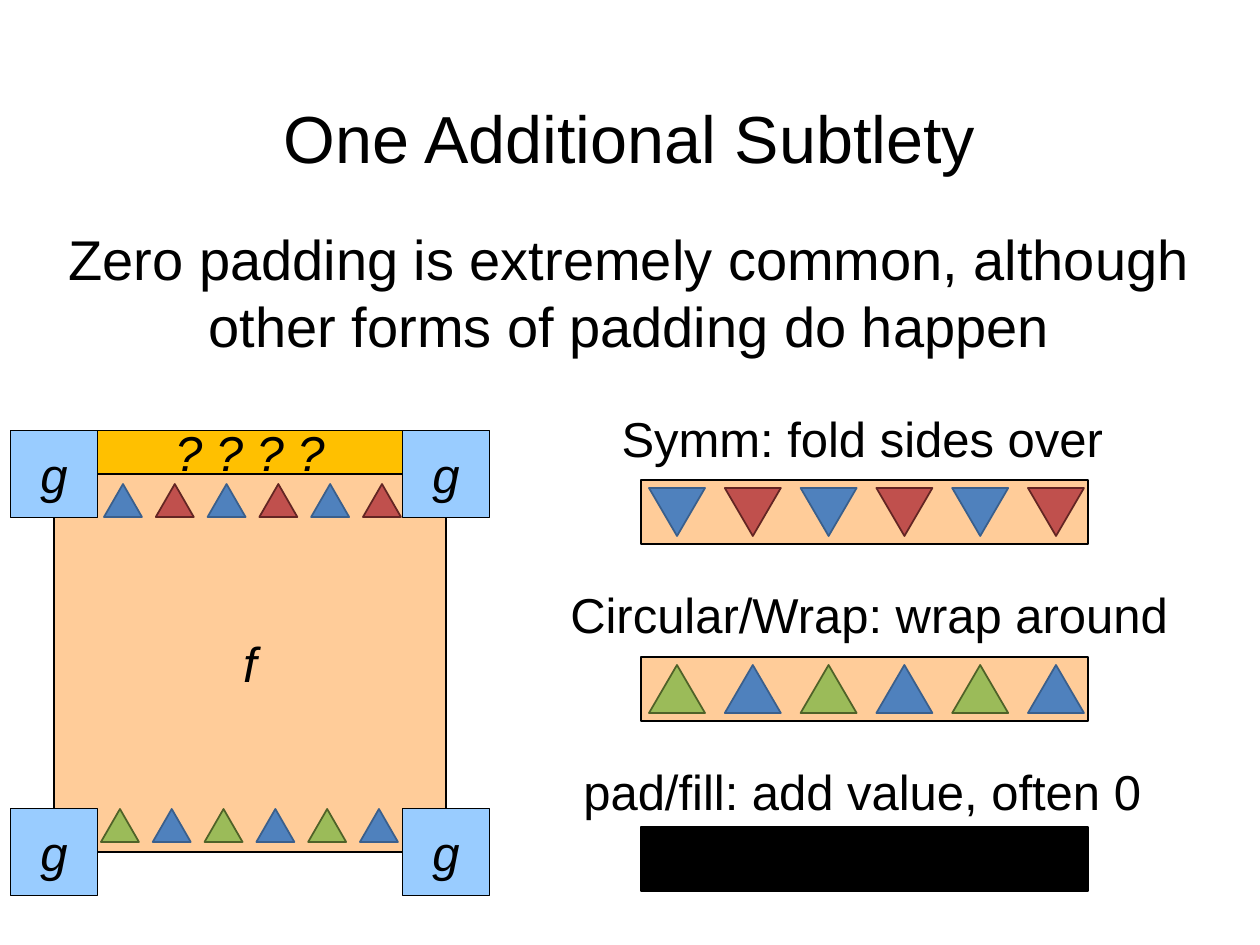
from dataclasses import dataclass

from pptx import Presentation
from pptx.dml.color import RGBColor
from pptx.enum.shapes import MSO_SHAPE
from pptx.enum.text import MSO_ANCHOR, MSO_AUTO_SIZE, PP_ALIGN
from pptx.util import Emu, Inches, Pt

RECT = MSO_SHAPE.RECTANGLE
TRIANGLE = MSO_SHAPE.ISOSCELES_TRIANGLE
MIDDLE = MSO_ANCHOR.MIDDLE
CENTER = PP_ALIGN.CENTER
FIT_SHAPE = MSO_AUTO_SIZE.SHAPE_TO_FIT_TEXT
NO_FIT = MSO_AUTO_SIZE.NONE
PX = 914400 / 126


@dataclass(frozen=True)
class Theme:
    font: str = "Arial"
    title: int = 38
    body: int = 32
    label: int = 28
    black: str = "000000"
    image: str = "FFCC99"
    kernel: str = "99CCFF"
    unknown: str = "FFC000"
    # Triangle colours as (fill, outline)
    blue: tuple = ("4F81BD", "3A5F8C")
    red: tuple = ("C0504D", "632523")
    green: tuple = ("9BBB59", "4F6228")


THEME = Theme()


def px(*lengths):
    return [Emu(round(n * PX)) for n in lengths]


def set_text(tf, text, size, italic=False):
    p = tf.paragraphs[0]
    p.text = text
    p.alignment = CENTER
    p.font.name = THEME.font
    p.font.size = Pt(size)
    p.font.italic = italic
    p.font.color.rgb = RGBColor.from_string(THEME.black)
    return p


def add_title(slide, text):
    sp = slide.shapes.title
    sp.left, sp.top, sp.width, sp.height = px(87, 50, 1086, 183)
    tf = sp.text_frame
    tf.auto_size = NO_FIT
    tf.vertical_anchor = MIDDLE
    set_text(tf, text, THEME.title).line_spacing = 0.9


def add_text(shapes, box, text, size):
    tf = shapes.add_textbox(*px(*box)).text_frame
    tf.word_wrap = True
    tf.auto_size = FIT_SHAPE
    set_text(tf, text, size)


def add_shape(shapes, kind, box, fill, line=THEME.black, width=0.75):
    sp = shapes.add_shape(kind, *px(*box))
    sp.shadow.inherit = False
    sp.fill.solid()
    sp.fill.fore_color.rgb = RGBColor.from_string(fill)
    sp.line.color.rgb = RGBColor.from_string(line)
    sp.line.width = Pt(width)
    return sp


def add_block(shapes, box, fill, text):
    tf = add_shape(shapes, RECT, box, fill).text_frame
    tf.word_wrap = False
    tf.vertical_anchor = MIDDLE
    set_text(tf, text, THEME.label, italic=True)


def add_triangles(shapes, box, pitch, colors, rotation=0):
    """Draw six triangles that alternate between two colours."""
    x, y, w, h = box
    for i in range(6):
        fill, line = colors[i % 2]
        sp = add_shape(shapes, TRIANGLE, (x + i * pitch, y, w, h), fill, line, 1)
        sp.rotation = rotation


def add_filter_diagram(slide):
    shapes = slide.shapes.add_group_shape().shapes
    left, top, width, height, kernel = 54, 474, 392, 378, 87
    add_block(shapes, (left, top, width, height), THEME.image, "f")
    # Kernels centred on the image corners
    for y in (top, top + height):
        for x in (left + width, left):
            box = (x - kernel / 2, y - kernel / 2, kernel, kernel)
            add_block(shapes, box, THEME.kernel, "g")
    # Unknown strip above the image
    strip = (left + kernel / 2, top - kernel / 2, width - kernel, kernel / 2)
    add_block(shapes, strip, THEME.unknown, "? ? ? ?")
    # Image content along the top and bottom edges
    add_triangles(shapes, (104, 484, 38, 33), 51.8, (THEME.blue, THEME.red))
    add_triangles(shapes, (101, 809, 38, 33), 51.8, (THEME.green, THEME.blue))


def add_padding(slide, caption, text_y, bar_y, fill, colors=None, rotation=0):
    shapes = slide.shapes.add_group_shape().shapes
    add_text(shapes, (535, text_y, 668, 72), caption, THEME.label)
    add_shape(shapes, RECT, (641, bar_y, 447, 64), fill)
    if colors:
        add_triangles(shapes, (649, bar_y + 8, 56, 48), 75.8, colors, rotation)


def main():
    prs = Presentation()
    prs.slide_width, prs.slide_height = Inches(10), Inches(7.5)
    slide = prs.slides.add_slide(prs.slide_layouts[5])

    # Heading and statement
    add_title(slide, "One Additional Subtlety")
    add_text(slide.shapes, (38, 218, 1183, 149),
             "Zero padding is extremely common, although "
             "other forms of padding do happen", THEME.body)

    # Image with the filter at its corners
    add_filter_diagram(slide)

    # Kinds of padding
    add_padding(slide, "Symm: fold sides over ", 402, 480, THEME.image,
                (THEME.blue, THEME.red), rotation=180)
    add_padding(slide, "Circular/Wrap: wrap around", 578, 657, THEME.image,
                (THEME.green, THEME.blue))
    add_padding(slide, "pad/fill: add value, often 0 ", 755, 827, THEME.black)

    prs.save("out.pptx")


if __name__ == "__main__":
    main()
